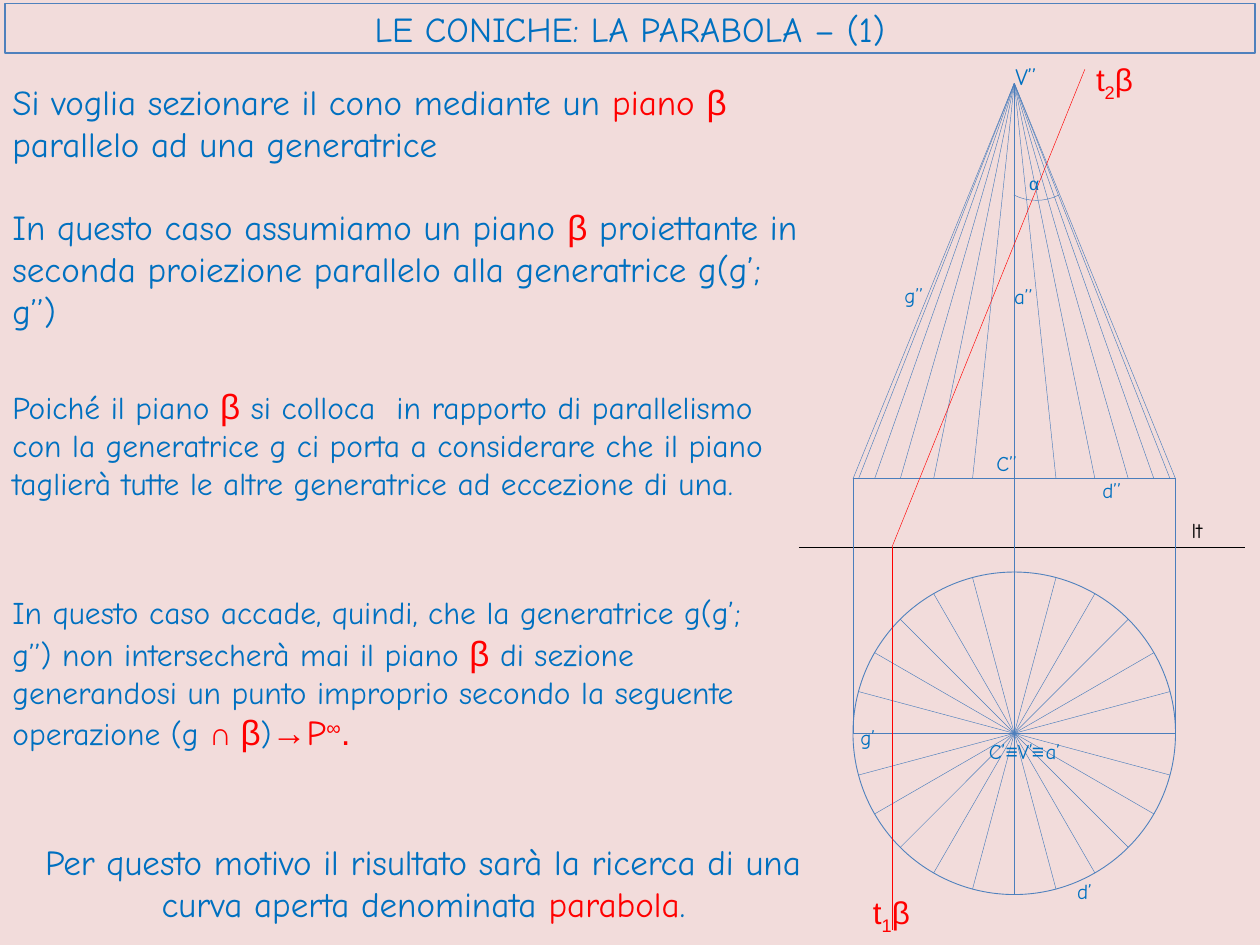
from dataclasses import dataclass
from math import cos, radians, sin

from lxml.etree import SubElement
from pptx import Presentation
from pptx.dml.color import RGBColor
from pptx.enum.shapes import MSO_CONNECTOR, MSO_SHAPE
from pptx.enum.text import MSO_ANCHOR, MSO_AUTO_SIZE, PP_ALIGN
from pptx.oxml.ns import qn
from pptx.util import Inches, Pt


@dataclass(frozen=True)
class Theme:
    background: str = "F2DCDB"
    blue: str = "0070C0"
    outline: str = "4F81BD"
    drawing: str = "4B7EBC"
    red: str = "FF0000"
    black: str = "000000"
    hand: str = "Comic Neue"
    symbol: str = "Arial"
    large: float = 20
    body: float = 18
    vertex: float = 13.5
    label: float = 12
    angle: float = 10.1
    thin: float = 0.25
    medium: float = 0.5
    frame: float = 0.75


THEME = Theme()

STYLES = {
    "text": (THEME.hand, THEME.blue, None, False),
    "greek": (THEME.symbol, THEME.blue, None, False),
    "ground": (THEME.hand, THEME.black, None, False),
    "key": (THEME.hand, THEME.red, THEME.large, False),
    "plane": (THEME.symbol, THEME.red, THEME.large, False),
    "operator": (THEME.symbol, THEME.red, None, True),
    "trace": (THEME.symbol, THEME.red, None, False),
}

TITLE = "LE CONICHE: LA PARABOLA – (1)"
LEFT, CENTER = PP_ALIGN.LEFT, PP_ALIGN.CENTER
PARAGRAPHS = [
    ((0, 0.59, 6.48, 0.77), THEME.large, LEFT, [
        ("Si voglia sezionare il cono mediante un ", "text"), ("piano ", "key"),
        ("β", "plane"), (" parallelo ad una generatrice", "text")]),
    ((0, 1.58, 6.45, 1.11), THEME.large, LEFT, [
        ("In questo caso assumiamo un piano ", "text"), ("β", "plane"),
        (" proiettante in seconda proiezione parallelo alla generatrice g(g’; g’’)", "text")]),
    ((0, 3, 6.3, 1.35), THEME.body, LEFT, [
        ("Poiché il piano ", "text"), ("β", "plane"),
        (" si colloca  in rapporto di parallelismo con la generatrice g ci porta a considerare "
         "che il piano taglierà tutte le altre generatrice ad eccezione di una.", "text")]),
    ((0, 4.66, 6.18, 1.38), THEME.body, LEFT, [
        ("In questo caso accade, quindi, che la generatrice g(g’; g’’) non intersecherà mai "
         "il piano ", "text"), ("β", "plane"),
        (" di sezione generandosi un punto improprio secondo la seguente operazione (g ", "text"),
        ("∩ ", "operator"), ("β", "plane"), (")", "text"), ("→", "plane"), ("P", "key"),
        ("∞", "plane", 30), (".", "plane")]),
    ((0, 6.62, 6.72, 0.77), THEME.large, CENTER, [
        ("Per questo motivo il risultato sarà la ricerca di una curva aperta denominata ", "text"),
        ("parabola", "key"), (".", "text")]),
]
LABELS = [
    ((7.81, 3.53, 0.52, 0.3), THEME.label, [("C’’", "text")]),
    ((7.75, 5.81, 0.59, 0.31), THEME.label, [("C’", "text"), ("≡", "greek"), ("V’", "text")]),
    ((8.09, 5.81, 0.31, 0.31), THEME.label, [("≡", "greek")]),
    ((8.2, 5.81, 0.38, 0.3), THEME.label, [("a’", "text")]),
    ((7.96, 0.44, 0.52, 0.35), THEME.vertex, [("V’’", "text")]),
    ((7.08, 2.19, 0.38, 0.3), THEME.label, [("g’’", "text")]),
    ((6.73, 5.7, 0.36, 0.3), THEME.label, [("g’", "text")]),
    ((9.36, 4.06, 0.38, 0.3), THEME.label, [("lt", "ground")]),
    ((8.65, 3.74, 0.38, 0.3), THEME.label, [("d’’", "text")]),
    ((8.45, 6.92, 0.36, 0.3), THEME.label, [("d’", "text")]),
    ((8.07, 1.32, 0.26, 0.32), THEME.angle, [("α", "greek")]),
    ((7.95, 2.2, 0.38, 0.3), THEME.label, [("a’’", "text")]),
    ((8.6, 0.43, 0.55, 0.4), THEME.body, [("t", "trace"), ("2", "trace", -25), ("β", "trace")]),
    ((6.83, 7.04, 0.55, 0.4), THEME.body, [("t", "trace"), ("1", "trace", -25), ("β", "trace")]),
]

AXIS_X, CENTER_Y, RADIUS = 8.05, 5.82, 1.28
VERTEX_Y, BASE_Y, GROUND_Y = 0.66, 3.8, 4.34
SECTORS = 12
TRACE_X = 7.08
ARC_BOX, ARC_RANGE = (7.87, 0.96, 0.71, 0.63), (142.531, 181.998)


def color(value):
    return RGBColor.from_string(value)


def box(values):
    return [Inches(value) for value in values]


def add_line(slide, start, end, tint=THEME.drawing, width=THEME.thin):
    line = slide.shapes.add_connector(MSO_CONNECTOR.STRAIGHT, *box(start + end))
    line.line.color.rgb = color(tint)
    line.line.width = Pt(width)
    SubElement(line._element.spPr, qn("a:effectLst"))


def add_outline(slide, preset, place, tint, width):
    shape = slide.shapes.add_shape(preset, *box(place))
    shape.shadow.inherit = False
    shape.fill.background()
    shape.line.color.rgb = color(tint)
    shape.line.width = Pt(width)
    return shape


def add_text(slide, place, size, runs, alignment=LEFT):
    frame = slide.shapes.add_textbox(*box(place)).text_frame
    frame.word_wrap = True
    frame.margin_right = 0 if place[2] < 1 else Inches(0.1)
    paragraph = frame.paragraphs[0]
    paragraph.alignment = alignment
    for text, style, *baseline in runs:
        name, tint, own_size, bold = STYLES[style]
        run = paragraph.add_run()
        run.text = text
        run.font.name = name
        run.font.size = Pt(own_size or size)
        run.font.bold = bold
        run.font.color.rgb = color(tint)
        if baseline:
            run._r.get_or_add_rPr().set("baseline", str(baseline[0] * 1000))


def add_title(slide):
    title = slide.shapes.title
    title.left, title.top, title.width, title.height = box((0.04, 0.03, 9.92, 0.39))
    title.line.color.rgb = color(THEME.outline)
    title.line.width = Pt(THEME.frame)
    frame = title.text_frame
    frame.text = TITLE
    frame.auto_size = MSO_AUTO_SIZE.NONE
    frame.vertical_anchor = MSO_ANCHOR.MIDDLE
    paragraph = frame.paragraphs[0]
    paragraph.alignment = CENTER
    paragraph.font.name = THEME.hand
    paragraph.font.size = Pt(THEME.large)
    paragraph.font.color.rgb = color(THEME.blue)


def draw_cone(slide):
    left, right = AXIS_X - RADIUS, AXIS_X + RADIUS
    vertex = (AXIS_X, VERTEX_Y)
    add_line(slide, (6.34, GROUND_Y), (9.88, GROUND_Y), THEME.black)
    add_outline(slide, MSO_SHAPE.OVAL, (left, CENTER_Y - RADIUS, 2 * RADIUS, 2 * RADIUS),
                THEME.outline, THEME.medium)
    add_line(slide, (left, BASE_Y), (right, BASE_Y), width=THEME.medium)
    for side in (left, right):
        add_line(slide, (side, CENTER_Y), (side, BASE_Y))
    for step in range(SECTORS + 1):
        angle = radians(180 * step / SECTORS)
        dx, dy = RADIUS * cos(angle), RADIUS * sin(angle)
        foot = CENTER_Y if step == SECTORS // 2 else BASE_Y
        add_line(slide, vertex, (AXIS_X - dx, foot))
        if step < SECTORS:
            add_line(slide, (AXIS_X - dx, CENTER_Y - dy), (AXIS_X + dx, CENTER_Y + dy))
    arc = add_outline(slide, MSO_SHAPE.ARC, ARC_BOX, THEME.drawing, THEME.thin)
    arc.rotation = 180
    arc.adjustments[0], arc.adjustments[1] = ARC_RANGE


def draw_plane(slide):
    add_line(slide, (8.61, 0.55), (TRACE_X, GROUND_Y), THEME.red)
    add_line(slide, (TRACE_X, GROUND_Y), (TRACE_X, 7.38), THEME.red)


def main():
    presentation = Presentation()
    presentation.slide_width, presentation.slide_height = box((10, 7.5))
    slide = presentation.slides.add_slide(presentation.slide_layouts[5])
    slide.background.fill.solid()
    slide.background.fill.fore_color.rgb = color(THEME.background)
    add_title(slide)
    draw_cone(slide)
    for place, size, alignment, runs in PARAGRAPHS:
        add_text(slide, place, size, runs, alignment)
    draw_plane(slide)
    for place, size, runs in LABELS:
        add_text(slide, place, size, runs)
    presentation.save("out.pptx")


if __name__ == "__main__":
    main()
